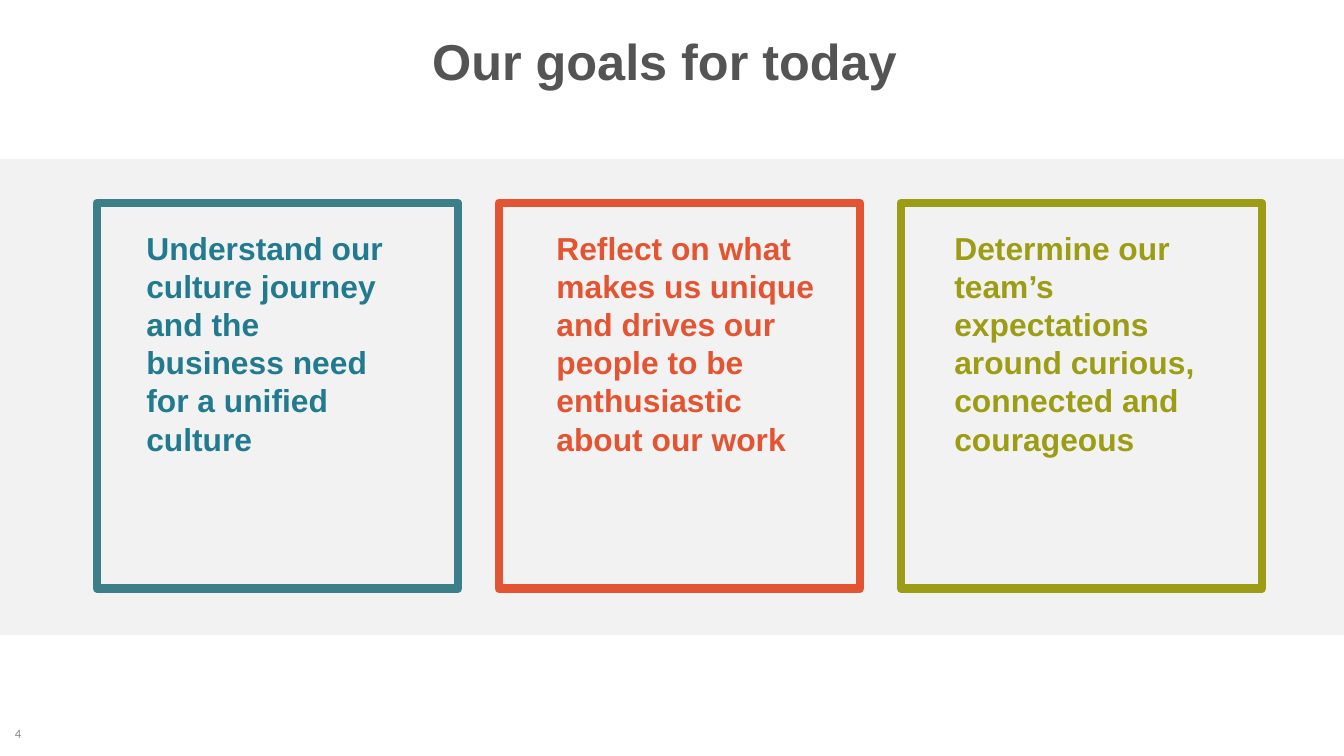
import pptx
import pptx.util
import pptx.dml.color
import pptx.enum.shapes
import pptx.enum.text
import pptx.oxml.ns
import lxml.etree

WIDTH = 10
HEIGHT = WIDTH * 9 / 16
COLORS = {
    "band": "F2F2F2", "title": "535453", "number": "898989",
    "teal": "3C7F89", "teal_text": "227A8F",
    "orange": "E35532", "olive": "9C9D14",
}
GOALS = [
    ("Understand our culture journey and the business need for a unified culture",
     "teal", "teal_text", 0.27),
    ("Reflect on what makes us unique and drives our people to be enthusiastic about our work",
     "orange", "orange", 0.33),
    ("Determine our team’s expectations around curious, connected and courageous",
     "olive", "olive", 0.3),
]


def rgb(name):
    return pptx.dml.color.RGBColor.from_string(COLORS[name])


def inches(box):
    return [pptx.util.Inches(v) for v in box]


def add_run(p, text, size, color, font="Arial", bold=True):
    r = p.add_run()
    r.text = text
    r.font.size = pptx.util.Pt(size)
    r.font.name = font
    r.font.bold = bold
    r.font.color.rgb = rgb(color)


def add_rect(s, box, line, width, fill=None):
    sp = s.shapes.add_shape(pptx.enum.shapes.MSO_SHAPE.RECTANGLE, *inches(box))
    sp.shadow.inherit = False
    if fill:
        sp.fill.solid()
        sp.fill.fore_color.rgb = rgb(fill)
    else:
        sp.fill.background()
    sp.line.color.rgb = rgb(line)
    sp.line.width = pptx.util.Pt(width)
    ln = sp.line.fill._xPr
    lxml.etree.SubElement(ln, pptx.oxml.ns.qn("a:round"))


def add_title(s, box, text):
    sp = s.shapes.title
    sp.left, sp.top, sp.width, sp.height = inches(box)
    tf = sp.text_frame
    tf.margin_left = 0
    tf.vertical_anchor = pptx.enum.text.MSO_ANCHOR.MIDDLE
    p = tf.paragraphs[0]
    p.alignment = pptx.enum.text.PP_ALIGN.CENTER
    p.line_spacing = 0.9
    add_run(p, text, 27, "title")


def add_goal(s, box, text, border, color, indent):
    x, y, w, h = box
    add_rect(s, box, border, 4.5)
    sp = s.shapes.add_textbox(*inches((x + indent, y + 0.05 * h, 0.79 * w, 0.635 * h)))
    tf = sp.text_frame
    tf.word_wrap = True
    tf.auto_size = pptx.enum.text.MSO_AUTO_SIZE.SHAPE_TO_FIT_TEXT
    add_run(tf.paragraphs[0], text, 17, color)


def add_goals(s, box):
    x, y, w, h = box
    card = 0.31 * w
    pitch = (w - card) / (len(GOALS) - 1)
    for i, goal in enumerate(GOALS):
        add_goal(s, (x + i * pitch, y, card, h), *goal)


def add_number(s, box, text):
    tf = s.shapes.add_textbox(*inches(box)).text_frame
    tf.word_wrap = True
    tf.margin_left = pptx.util.Inches(0.08)
    tf.margin_right = 0
    tf.vertical_anchor = pptx.enum.text.MSO_ANCHOR.MIDDLE
    add_run(tf.paragraphs[0], text, 6.8, "number", "Calibri", False)


def main():
    prs = pptx.Presentation()
    prs.slide_width, prs.slide_height = inches((WIDTH, HEIGHT))
    s = prs.slides.add_slide(prs.slide_layouts.get_by_name("Title Only"))
    add_rect(s, (0, 1.2, WIDTH, 3.51), "band", 2, "band")
    add_title(s, (0.79, 0.18, 8.41, 0.59), "Our goals for today")
    add_goals(s, (0.72, 1.51, 8.67, 2.87))
    add_number(s, (0.03, 5.38, 0.48, 0.16), "4")
    prs.save("out.pptx")


if __name__ == "__main__":
    main()
